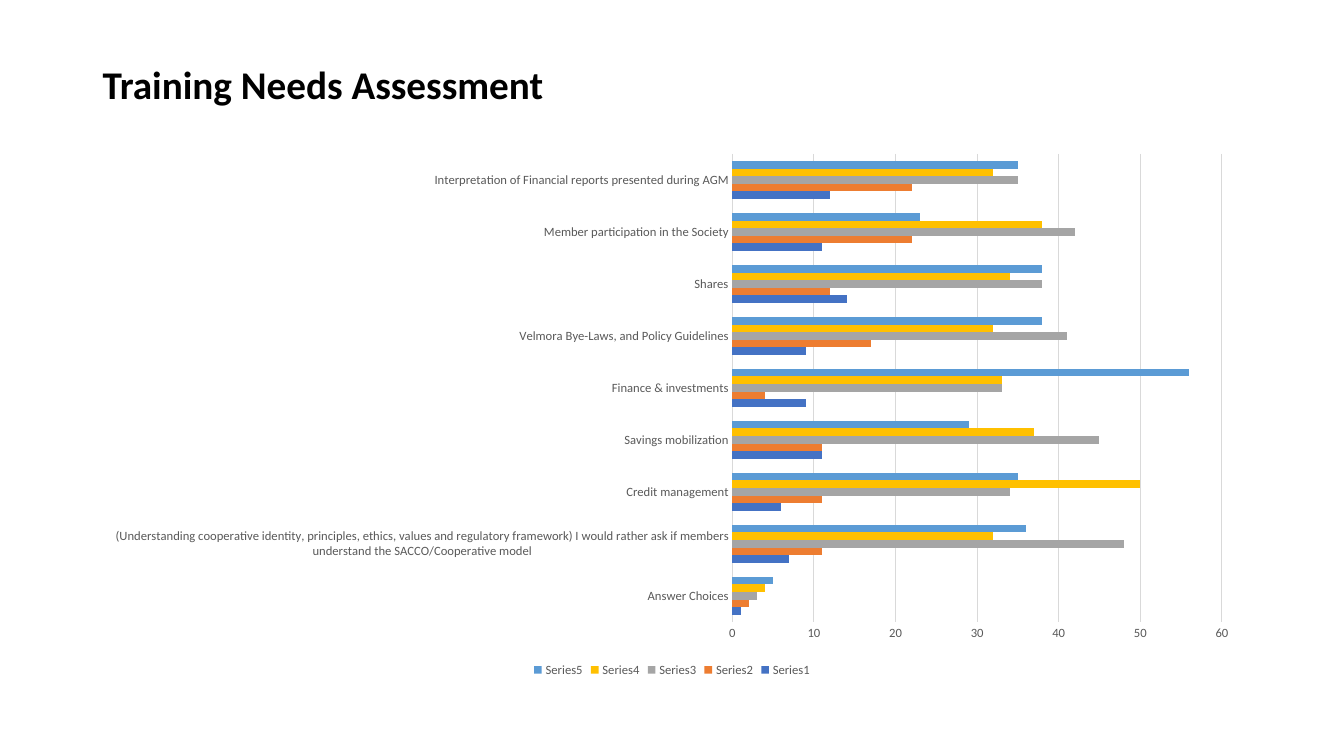
"""Build the training needs assessment slide with its clustered bar chart."""
from pptx import Presentation
from pptx.chart.data import CategoryChartData
from pptx.dml.color import RGBColor
from pptx.enum.chart import XL_CHART_TYPE, XL_LEGEND_POSITION, XL_TICK_MARK
from pptx.enum.text import MSO_ANCHOR, PP_ALIGN
from pptx.util import Cm, Pt


def rgb(value):
    return RGBColor.from_string(value)


def write(frame, text="", size=10, color="000000", bold=False, align=PP_ALIGN.LEFT):
    paragraph = frame.paragraphs[0]
    paragraph.alignment = align
    paragraph.line_spacing = 0.9
    run = paragraph.add_run()
    run.text = text
    run.font.name = "Calibri"
    run.font.size = Pt(size)
    run.font.bold = bold
    run.font.color.rgb = rgb(color)


GRAY_TEXT, GRAY_LINE = "595959", "D9D9D9"
LEFT, WIDTH = Cm(2.33), Cm(29.21)

topics = [
    ("Answer Choices", (1, 2, 3, 4, 5)),
    ("(Understanding cooperative identity, principles, ethics, values and regulatory "
     "framework) I would rather ask if members understand the SACCO/Cooperative model",
     (7, 11, 48, 32, 36)),
    ("Credit management", (6, 11, 34, 50, 35)),
    ("Savings mobilization", (11, 11, 45, 37, 29)),
    ("Finance & investments", (9, 4, 33, 33, 56)),
    ("Velmora Bye-Laws, and Policy Guidelines", (9, 17, 41, 32, 38)),
    ("Shares", (14, 12, 38, 34, 38)),
    ("Member participation in the Society", (11, 22, 42, 38, 23)),
    ("Interpretation of Financial reports presented during AGM", (12, 22, 35, 32, 35)),
]
rating_colors = ["4472C4", "ED7D31", "A5A5A5", "FFC000", "5B9BD5"]

deck = Presentation()
deck.slide_width, deck.slide_height = Cm(33.87), Cm(19.05)
slide = deck.slides.add_slide(deck.slide_layouts[5])

title = slide.shapes.title
title.left, title.top, title.width, title.height = LEFT, Cm(1.01), WIDTH, Cm(2.34)
title.text_frame.vertical_anchor = MSO_ANCHOR.MIDDLE
write(title.text_frame, "Training Needs Assessment", size=28, bold=True)

responses = CategoryChartData(number_format="General")
responses.categories = [topic for topic, counts in topics]
for number, counts in enumerate(zip(*(counts for topic, counts in topics)), start=1):
    responses.add_series(f"Series{number}", counts)

chart = slide.shapes.add_chart(
    XL_CHART_TYPE.BAR_CLUSTERED, LEFT, Cm(3.61), WIDTH, Cm(13.56), responses
).chart
chart.has_title = False
chart.font.name = "Calibri"
chart.font.size = Pt(10)
chart.font.color.rgb = rgb("000000")

bars = chart.plots[0]
bars.gap_width = 182
bars.overlap = 0
bars.vary_by_categories = False
for rating, color in zip(bars.series, rating_colors):
    rating.format.fill.solid()
    rating.format.fill.fore_color.rgb = rgb(color)

chart.has_legend = True
chart.legend.position = XL_LEGEND_POSITION.BOTTOM
chart.legend.include_in_layout = False

topic_axis, count_axis = chart.category_axis, chart.value_axis
for axis in (topic_axis, count_axis):
    axis.major_tick_mark = XL_TICK_MARK.NONE
    axis.minor_tick_mark = XL_TICK_MARK.NONE
for font in (topic_axis.tick_labels.font, count_axis.tick_labels.font, chart.legend.font):
    font.name = "Calibri"
    font.size = Pt(9)
    font.color.rgb = rgb(GRAY_TEXT)

count_axis.minimum_scale, count_axis.maximum_scale = 0, 60
count_axis.major_unit = 10
count_axis.has_major_gridlines = True
count_axis.format.line.fill.background()
for line in (topic_axis.format.line, count_axis.major_gridlines.format.line):
    line.color.rgb = rgb(GRAY_LINE)
    line.width = Pt(0.75)

deck.save("out.pptx")
